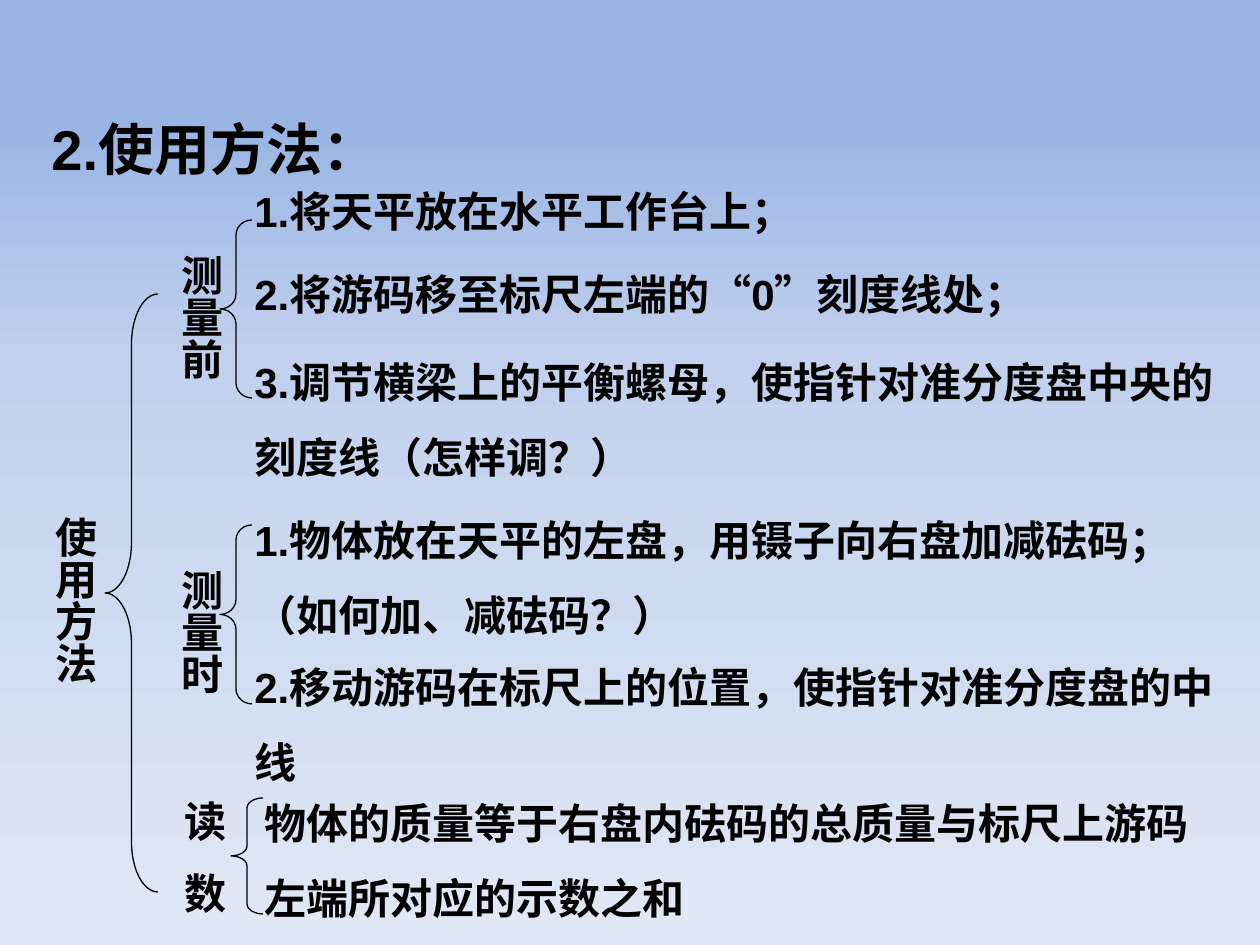
"""Build a slide that outlines how to use a balance, with braces grouping the steps."""
from dataclasses import dataclass

from pptx import Presentation, util as u
from pptx.dml.color import RGBColor
from pptx.enum import shapes, text
from pptx.oxml import ns
from lxml import etree

EMU_PER_PX = 914400 / 126


@dataclass(frozen=True)
class Theme:
    ink: str = "000000"
    backdrop: tuple = ((13, "9AB5E4"), (39, "C2D1ED"), (100, "E1E8F5"))
    sans: str = "Arial"
    serif: str = "Times New Roman"
    heading_pt: int = 32
    body_pt: int = 24
    brace_pt: float = 0.75


THEME = Theme()


@dataclass(frozen=True)
class Box:
    left: int
    top: int
    width: int
    height: int

    def emu(self) -> tuple:
        return tuple(px(n) for n in (self.left, self.top, self.width, self.height))


@dataclass(frozen=True)
class Passage:
    wording: str
    box: Box
    face: str = THEME.sans
    size: int = THEME.body_pt
    leading: float = 1.0
    centred: bool = False


@dataclass(frozen=True)
class Stage:
    wording: str
    box: Box
    tracking: int = 0


@dataclass(frozen=True)
class Brace:
    box: Box
    curl: float


HEADING = Passage("2.使用方法：", Box(-21, 108, 472, 81), size=THEME.heading_pt, centred=True)
STEPS = (
    Passage("1.将天平放在水平工作台上；", Box(242, 179, 770, 64)),
    Passage("2.将游码移至标尺左端的“0”刻度线处；", Box(242, 262, 941, 64)),
    Passage("3.调节横梁上的平衡螺母，使指针对准分度盘中央的刻度线（怎样调？）",
            Box(242, 325, 987, 165), leading=1.5),
    Passage("1.物体放在天平的左盘，用镊子向右盘加减砝码；（如何加、减砝码？）",
            Box(242, 483, 977, 154), leading=1.5),
    Passage("2.移动游码在标尺上的位置，使指针对准分度盘的中线",
            Box(242, 630, 998, 165), leading=1.5),
    Passage("物体的质量等于右盘内砝码的总质量与标尺上游码左端所对应的示数之和",
            Box(252, 766, 966, 166), face=THEME.serif, leading=1.5),
)
STAGES = (
    Stage("使用方法", Box(29, 504, 77, 199)),
    Stage("测量前", Box(155, 242, 77, 199)),
    Stage("测量时", Box(155, 557, 77, 199)),
    Stage("读数", Box(158, 788, 77, 158), tracking=1700),
)
BRACES = (
    Brace(Box(105, 294, 53, 598), 0.95),
    Brace(Box(220, 220, 32, 178), 0.47),
    Brace(Box(220, 525, 32, 179), 0.47),
    Brace(Box(231, 798, 32, 116), 0.31),
)


def px(count: int) -> int:
    return round(count * EMU_PER_PX)


def paint_backdrop(slide) -> None:
    fill = slide.background.fill
    fill.gradient()
    fill.gradient_angle = 270
    stops = slide.element.find(".//" + ns.qn("a:gsLst"))
    for stop in list(stops):
        stops.remove(stop)
    for percent, colour in THEME.backdrop:
        stop = etree.SubElement(stops, ns.qn("a:gs"), pos=str(percent * 1000))
        etree.SubElement(stop, ns.qn("a:srgbClr"), val=colour)


def add_wording(slide, wording: str, box: Box, face: str, size: int):
    frame = slide.shapes.add_textbox(*box.emu()).text_frame
    frame.word_wrap = True
    paragraph = frame.paragraphs[0]
    paragraph.text = wording
    paragraph.font.name = face
    paragraph.font.size = u.Pt(size)
    paragraph.font.bold = True
    paragraph.font.color.rgb = RGBColor.from_string(THEME.ink)
    return frame


def draw_passage(slide, passage: Passage) -> None:
    frame = add_wording(slide, passage.wording, passage.box, passage.face, passage.size)
    frame.paragraphs[0].line_spacing = passage.leading
    if passage.centred:
        frame.vertical_anchor = text.MSO_ANCHOR.MIDDLE
        frame.paragraphs[0].alignment = text.PP_ALIGN.CENTER


def draw_stage(slide, stage: Stage) -> None:
    frame = add_wording(slide, stage.wording, stage.box, THEME.serif, THEME.body_pt)
    frame._txBody.bodyPr.set("vert", "eaVert")
    if stage.tracking:
        run = frame.paragraphs[0].runs[0]
        run.font._element.set("spc", str(stage.tracking))


def draw_brace(slide, brace: Brace) -> None:
    outline = slide.shapes.add_shape(shapes.MSO_SHAPE.LEFT_BRACE, *brace.box.emu())
    outline.adjustments[0] = brace.curl
    outline.adjustments[1] = 0.5
    outline.shadow.inherit = False
    outline.fill.background()
    outline.line.color.rgb = RGBColor.from_string(THEME.ink)
    outline.line.width = u.Pt(THEME.brace_pt)


def main() -> None:
    deck = Presentation()
    deck.slide_width, deck.slide_height = px(1260), px(945)
    slide = deck.slides.add_slide(deck.slide_layouts[6])
    paint_backdrop(slide)
    for passage in (HEADING, *STEPS):
        draw_passage(slide, passage)
    for stage in STAGES:
        draw_stage(slide, stage)
    for brace in BRACES:
        draw_brace(slide, brace)
    deck.save("out.pptx")


if __name__ == "__main__":
    main()
